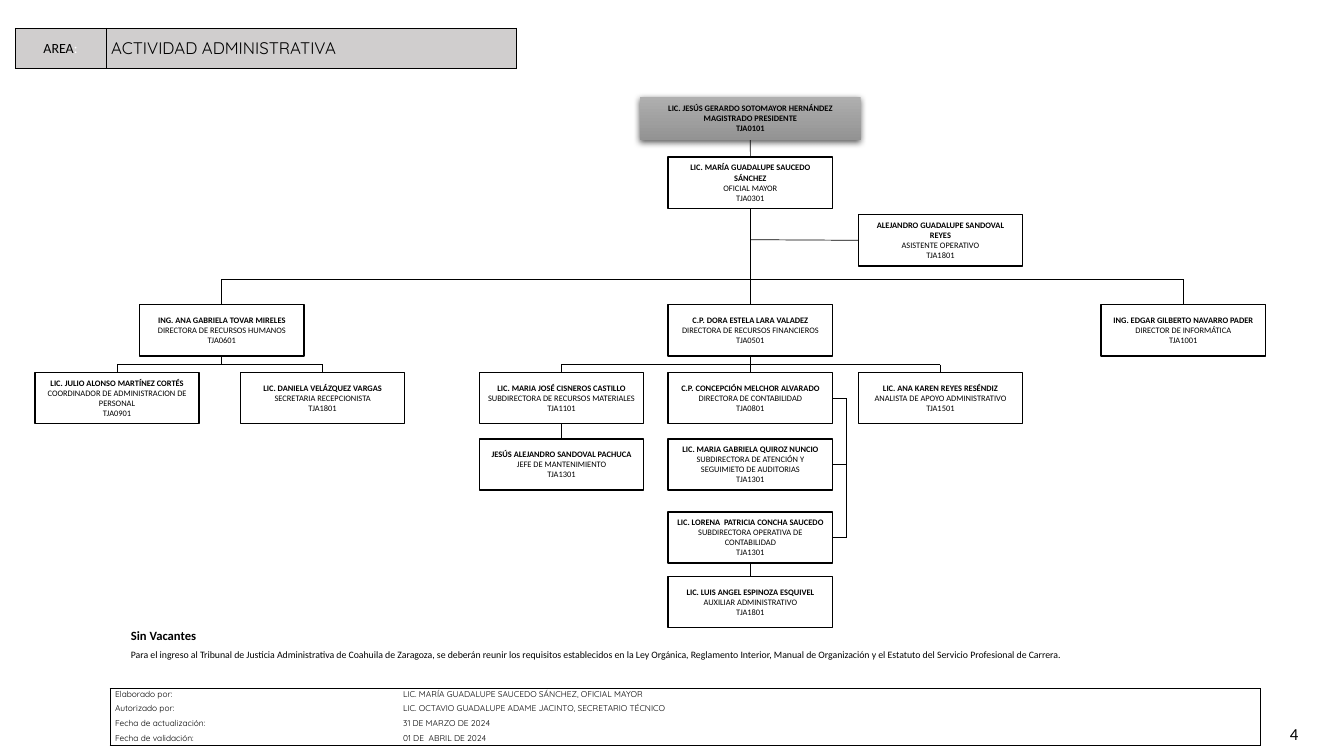
"""Organisation chart of the administrative area, with its header and sign-off tables."""
from dataclasses import dataclass

from lxml.etree import SubElement
from pptx import Presentation
from pptx.dml.color import RGBColor
from pptx.enum.shapes import MSO_CONNECTOR, MSO_SHAPE
from pptx.enum.text import MSO_ANCHOR, PP_ALIGN
from pptx.oxml.ns import qn
from pptx.util import Cm, Pt


@dataclass(frozen=True)
class Theme:
    black: str = "000000"
    white: str = "FFFFFF"
    header: str = "D0CECE"
    gradient: tuple = ("AFAFAF", "939393")
    body_font: str = "Calibri"
    table_font: str = "Quicksand"
    tiny: float = 6
    note: float = 7
    subtitle: float = 9
    label: float = 10
    title: float = 12
    thin: float = 0.5
    outline: float = 1


THEME = Theme()
TOP, LEFT, BOTTOM, RIGHT = range(4)

AREA_LABEL, AREA_NAME = "AREA", "ACTIVIDAD ADMINISTRATIVA"
PAGE_NUMBER = "4"
VACANCIES = "Sin Vacantes"
ADMISSION = (
    "Para el ingreso al Tribunal de Justicia Administrativa de Coahuila de Zaragoza, se deberán reunir "
    "los requisitos establecidos en la Ley Orgánica, Reglamento Interior, Manual de Organización y el "
    "Estatuto del Servicio Profesional de Carrera."
)
SIGN_OFF = [
    ("Elaborado por:", "LIC. MARÍA GUADALUPE SAUCEDO SÁNCHEZ, OFICIAL MAYOR"),
    ("Autorizado por:", "LIC. OCTAVIO GUADALUPE ADAME JACINTO, SECRETARIO TÉCNICO"),
    ("Fecha de actualización:", "31 DE MARZO DE 2024"),
    ("Fecha de validación:", "01 DE  ABRIL DE 2024"),
]
COLUMN_CENTRES = {"coordinator": 2.95, "human": 5.59, "reception": 8.13, "materials": 14.15,
                  "finance": 18.91, "support": 23.7, "systems": 29.82}
ROW_TOPS = {"president": 2.44, "officer": 3.96, "assistant": 5.41, "directors": 7.68,
            "deputies": 9.39, "units": 11.06, "accounts": 12.9, "auxiliary": 14.53}
POSTS = {
    "president": ("finance", "president", "LIC. JESÚS GERARDO SOTOMAYOR HERNÁNDEZ", "MAGISTRADO PRESIDENTE", "TJA0101"),
    "officer": ("finance", "officer", "LIC. MARÍA GUADALUPE SAUCEDO SÁNCHEZ", "OFICIAL MAYOR", "TJA0301"),
    "assistant": ("support", "assistant", "ALEJANDRO GUADALUPE SANDOVAL REYES", "ASISTENTE OPERATIVO", "TJA1801"),
    "human": ("human", "directors", "ING. ANA GABRIELA TOVAR MIRELES", "DIRECTORA DE RECURSOS HUMANOS", "TJA0601"),
    "finance": ("finance", "directors", "C.P. DORA ESTELA LARA VALADEZ", "DIRECTORA DE RECURSOS FINANCIEROS", "TJA0501"),
    "systems": ("systems", "directors", "ING. EDGAR GILBERTO NAVARRO PADER", "DIRECTOR DE INFORMÁTICA", "TJA1001"),
    "coordinator": ("coordinator", "deputies", "LIC. JULIO ALONSO MARTÍNEZ CORTÉS",
                    "COORDINADOR DE ADMINISTRACION DE PERSONAL", "TJA0901"),
    "reception": ("reception", "deputies", "LIC. DANIELA VELÁZQUEZ VARGAS", "SECRETARIA RECEPCIONISTA", "TJA1801"),
    "materials": ("materials", "deputies", "LIC. MARIA JOSÉ CISNEROS CASTILLO",
                  "SUBDIRECTORA DE RECURSOS MATERIALES", "TJA1101"),
    "accounting": ("finance", "deputies", "C.P. CONCEPCIÓN MELCHOR ALVARADO", "DIRECTORA DE CONTABILIDAD", "TJA0801"),
    "support": ("support", "deputies", "LIC. ANA KAREN REYES RESÉNDIZ", "ANALISTA DE APOYO ADMINISTRATIVO", "TJA1501"),
    "maintenance": ("materials", "units", "JESÚS ALEJANDRO SANDOVAL PACHUCA", "JEFE DE MANTENIMIENTO", "TJA1301"),
    "audits": ("finance", "units", "LIC. MARIA GABRIELA QUIROZ NUNCIO",
               "SUBDIRECTORA DE ATENCIÓN Y SEGUIMIETO DE AUDITORIAS", "TJA1301"),
    "accounts": ("finance", "accounts", "LIC. LORENA  PATRICIA CONCHA SAUCEDO",
                 "SUBDIRECTORA OPERATIVA DE CONTABILIDAD", "TJA1301"),
    "auxiliary": ("finance", "auxiliary", "LIC. LUIS ANGEL ESPINOZA ESQUIVEL", "AUXILIAR ADMINISTRATIVO", "TJA1801"),
}
DIRECT_LINKS = [("president", "officer"), ("officer", "finance"), ("finance", "accounting"),
                ("materials", "maintenance"), ("accounts", "auxiliary")]
BRANCHES = [("officer", ("human", "systems"), 7.04),
            ("human", ("coordinator", "reception"), 9.19),
            ("finance", ("materials", "support"), 9.19)]
ACCOUNTING_TEAM = ("accounting", "audits", "accounts")
SPINE_LEFT, ASSISTANT_CENTRE = 21.34, 6.04


def write(paragraph, text, size=THEME.tiny, font=THEME.body_font, color=THEME.black,
          bold=False, align=PP_ALIGN.LEFT, spacing=None):
    """Add one formatted run to a paragraph."""
    paragraph.alignment = align
    if spacing:
        paragraph.line_spacing = spacing
    run = paragraph.add_run()
    run.text = text
    run.font.size, run.font.name, run.font.bold = Pt(size), font, bold
    run.font.color.rgb = RGBColor.from_string(color)


def add_post(slide, name):
    """Draw the box of one post."""
    column, row, *lines = POSTS[name]
    chief = name == "president"
    width, height = (5.56, 1.09) if chief else (4.14, 1.29)
    shape = slide.shapes.add_shape(MSO_SHAPE.RECTANGLE, Cm(COLUMN_CENTRES[column] - width / 2),
                                   Cm(ROW_TOPS[row]), Cm(width), Cm(height))
    shape.shadow.inherit = False
    if chief:
        shape.fill.gradient()
        shape.fill.gradient_angle = 270
        for stop, color in zip(shape.fill.gradient_stops, THEME.gradient):
            stop.color.rgb = RGBColor.from_string(color)
        shape.line.fill.background()
        effects = shape._element.spPr.find(qn("a:effectLst"))
        shadow = SubElement(effects, qn("a:outerShdw"), blurRad=str(Pt(4.5)), dist=str(Pt(1.5)),
                            dir="5400000", algn="ctr", rotWithShape="0")
        color = SubElement(shadow, qn("a:srgbClr"), val=THEME.black)
        SubElement(color, qn("a:alpha"), val="63000")
    else:
        shape.fill.solid()
        shape.fill.fore_color.rgb = RGBColor.from_string(THEME.white)
        shape.line.color.rgb = RGBColor.from_string(THEME.black)
        shape.line.width = Pt(THEME.outline)
    frame = shape.text_frame
    frame.word_wrap, frame.vertical_anchor = True, MSO_ANCHOR.MIDDLE
    frame.margin_left = frame.margin_right = Cm(0.18)
    frame.margin_top = frame.margin_bottom = Cm(0.1)
    for index, line in enumerate(lines):
        paragraph = frame.add_paragraph() if index else frame.paragraphs[0]
        write(paragraph, line, bold=chief or index == 0, align=PP_ALIGN.CENTER)
    return shape


def side_point(shape, side):
    """Return the middle of one side of a box."""
    across = {LEFT: 0, RIGHT: shape.width}.get(side, shape.width // 2)
    down = {TOP: 0, BOTTOM: shape.height}.get(side, shape.height // 2)
    return shape.left + across, shape.top + down


def join(slide, start, end, start_side=None, end_side=None):
    """Draw a straight line between points, or boxes when a side is given."""
    first = start if start_side is None else side_point(start, start_side)
    last = end if end_side is None else side_point(end, end_side)
    connector = slide.shapes.add_connector(MSO_CONNECTOR.STRAIGHT, *first, *last)
    connector.line.color.rgb = RGBColor.from_string(THEME.black)
    connector.line.width = Pt(THEME.thin)
    SubElement(connector._element.spPr, qn("a:effectLst"))
    if start_side is not None:
        connector.begin_connect(start, start_side)
    if end_side is not None:
        connector.end_connect(end, end_side)


def add_links(slide, boxes):
    """Draw every reporting line."""
    for upper, lower in DIRECT_LINKS:
        join(slide, boxes[upper], boxes[lower], BOTTOM, TOP)
    for parent, children, level in BRANCHES:
        ends = [(side_point(boxes[child], TOP)[0], Cm(level)) for child in children]
        join(slide, *ends)
        for child, point in zip(children, ends):
            join(slide, point, boxes[child], end_side=TOP)
        if parent == "human":
            join(slide, boxes[parent], (side_point(boxes[parent], BOTTOM)[0], Cm(level)), BOTTOM)
    spine = [(Cm(SPINE_LEFT), side_point(boxes[name], RIGHT)[1]) for name in ACCOUNTING_TEAM]
    join(slide, spine[0], spine[-1])
    for name, point in zip(ACCOUNTING_TEAM, spine):
        join(slide, boxes[name], point, RIGHT)
    join(slide, boxes["assistant"], (Cm(COLUMN_CENTRES["finance"]), Cm(ASSISTANT_CENTRE)), LEFT)


def add_grid(slide, left, top, widths, heights, fill=None, divided=False):
    """Add a plain framed table and return it."""
    table = slide.shapes.add_table(len(heights), len(widths), Cm(left), Cm(top),
                                   Cm(sum(widths)), Cm(sum(heights))).table
    table.first_row = table.horz_banding = False
    for column, width in zip(table.columns, widths):
        column.width = Cm(width)
    for row, height in zip(table.rows, heights):
        row.height = Cm(height)
    for row in range(len(heights)):
        for column in range(len(widths)):
            cell = table.cell(row, column)
            cell.vertical_anchor = MSO_ANCHOR.MIDDLE
            cell.margin_left = cell.margin_right = Cm(0.13)
            cell.margin_top = cell.margin_bottom = 0
            edges = {"L": divided or column == 0, "R": divided or column == len(widths) - 1,
                     "T": row == 0, "B": row == len(heights) - 1}
            for edge, drawn in edges.items():
                line = SubElement(cell._tc.get_or_add_tcPr(), qn(f"a:ln{edge}"), w=str(Pt(THEME.thin)))
                paint = SubElement(line, qn("a:solidFill" if drawn else "a:noFill"))
                if drawn:
                    SubElement(paint, qn("a:srgbClr"), val=THEME.black)
            if fill:
                cell.fill.solid()
                cell.fill.fore_color.rgb = RGBColor.from_string(fill)
            else:
                cell.fill.background()
    return table


def main():
    """Build and save the slide."""
    presentation = Presentation()
    presentation.slide_width, presentation.slide_height = Cm(33.87), Cm(19.05)
    slide = presentation.slides.add_slide(presentation.slide_layouts[6])
    header = add_grid(slide, 0.38, 0.71, (2.29, 10.34), (1.02,), fill=THEME.header, divided=True)
    label = header.cell(0, 0).text_frame.paragraphs[0]
    write(label, AREA_LABEL, size=THEME.label, align=PP_ALIGN.CENTER)
    write(label, ":", size=THEME.label, color=THEME.white, align=PP_ALIGN.CENTER)
    write(header.cell(0, 1).text_frame.paragraphs[0], AREA_NAME, size=THEME.title, font=THEME.table_font)
    add_links(slide, {name: add_post(slide, name) for name in POSTS})
    note = slide.shapes.add_textbox(Cm(3.05), Cm(15.7), Cm(28.85), Cm(1.04)).text_frame
    note.word_wrap = True
    write(note.paragraphs[0], VACANCIES, size=THEME.subtitle, bold=True)
    write(note.add_paragraph(), ADMISSION, size=THEME.note, spacing=1.5)
    sign_off = add_grid(slide, 2.77, 17.35, (7.26, 21.74), (0.31, 0.36, 0.4, 0.36))
    for row, texts in enumerate(SIGN_OFF):
        for column, text in enumerate(texts):
            write(sign_off.cell(row, column).text_frame.paragraphs[0], text, font=THEME.table_font)
    page = slide.shapes.add_textbox(Cm(29.11), Cm(17.98), Cm(3.86), Cm(1.02)).text_frame
    page.word_wrap, page.vertical_anchor = True, MSO_ANCHOR.MIDDLE
    write(page.paragraphs[0], PAGE_NUMBER, size=THEME.title, align=PP_ALIGN.RIGHT)
    presentation.save("out.pptx")


if __name__ == "__main__":
    main()
